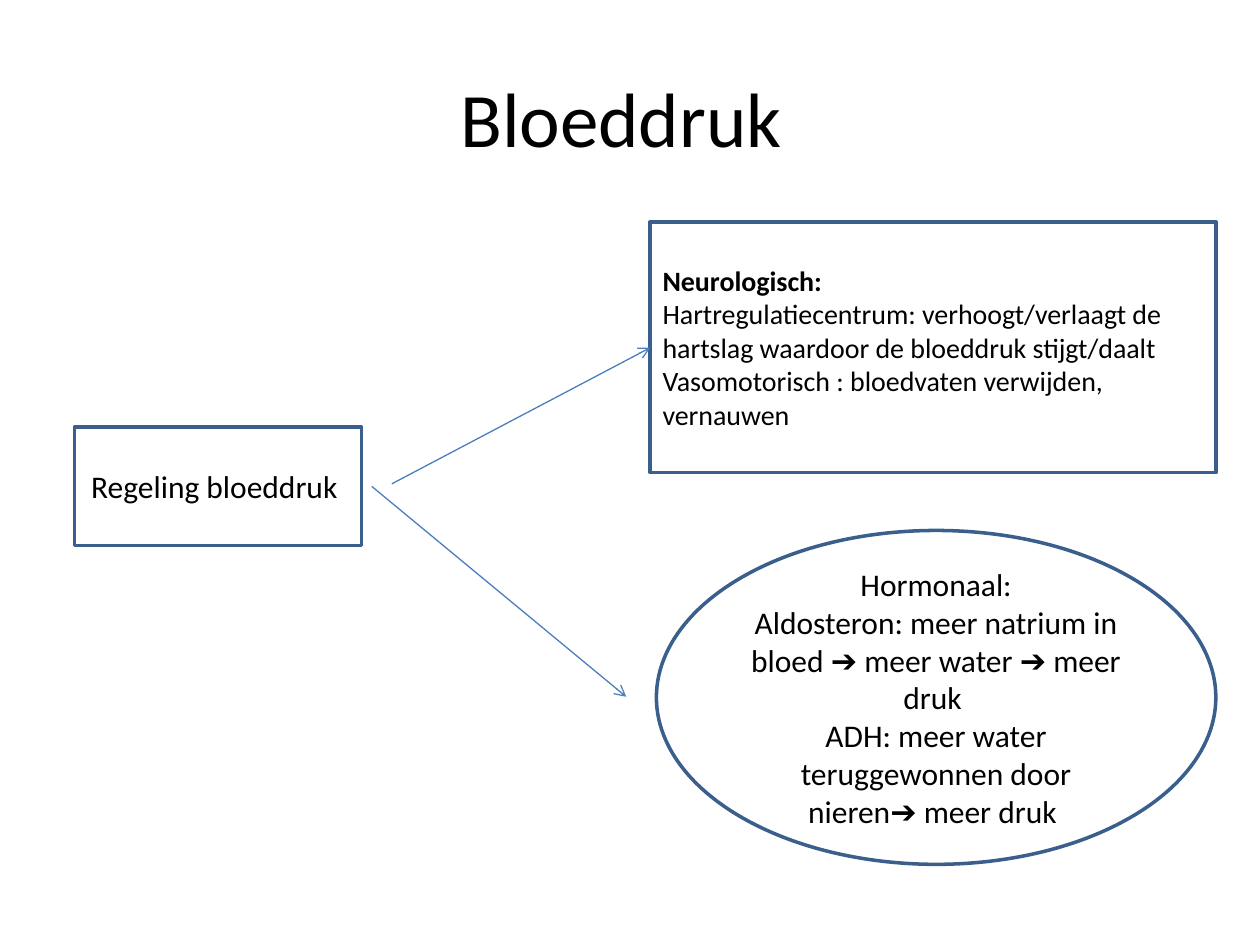
from lxml import etree
from pptx import Presentation
from pptx.dml.color import RGBColor
from pptx.enum.shapes import MSO_CONNECTOR, MSO_SHAPE
from pptx.enum.text import MSO_ANCHOR, PP_ALIGN
from pptx.oxml.ns import qn
from pptx.util import Inches, Pt

RECTANGLE, OVAL = MSO_SHAPE.RECTANGLE, MSO_SHAPE.OVAL
STRAIGHT = MSO_CONNECTOR.STRAIGHT
MIDDLE = MSO_ANCHOR.MIDDLE
LEFT, CENTER = PP_ALIGN.LEFT, PP_ALIGN.CENTER
TITLE_ONLY = 5


def color(value):
    return RGBColor.from_string(value)


def set_text(shape, lines, size, alignment):
    text_frame = shape.text_frame
    text_frame.word_wrap = True
    text_frame.vertical_anchor = MIDDLE
    text_frame.text = "\n".join(lines)
    for paragraph in text_frame.paragraphs:
        paragraph.alignment = alignment
        for run in paragraph.runs:
            run.font.name = "Calibri"
            run.font.size = Pt(size)
            run.font.color.rgb = color("000000")


presentation = Presentation()
presentation.slide_width = Inches(10)
presentation.slide_height = Inches(7.5)
slide = presentation.slides.add_slide(presentation.slide_layouts[TITLE_ONLY])

# Title
title = slide.shapes.title
title.left, title.top = Inches(0.5), Inches(0.3)
title.width, title.height = Inches(9), Inches(1.25)
set_text(title, ["Bloeddruk "], 44, CENTER)

# Topic and its two kinds of regulation
boxes = [
    (RECTANGLE, (0.59, 3.39, 2.28, 0.94), 18, CENTER, ["Regeling bloeddruk "]),
    (RECTANGLE, (5.16, 1.76, 4.49, 1.99), 16, LEFT, [
        "Neurologisch:",
        "Hartregulatiecentrum: verhoogt/verlaagt de hartslag waardoor de bloeddruk stijgt/daalt",
        "Vasomotorisch : bloedvaten verwijden, vernauwen",
    ]),
    (OVAL, (5.21, 4.21, 4.44, 2.65), 18, CENTER, [
        "Hormonaal:",
        "Aldosteron: meer natrium in bloed ➔ meer water ➔ meer druk ",
        "ADH: meer water teruggewonnen door nieren➔ meer druk ",
    ]),
]
for kind, position, size, alignment, lines in boxes:
    shape = slide.shapes.add_shape(kind, *map(Inches, position))
    shape.shadow.inherit = False
    shape.fill.solid()
    shape.fill.fore_color.rgb = color("FFFFFF")
    shape.line.color.rgb = color("3A5F8C")
    shape.line.width = Pt(2)
    set_text(shape, lines, size, alignment)
    if lines[0] == "Neurologisch:":
        shape.text_frame.paragraphs[0].runs[0].font.bold = True

# Arrows from the topic
for ends in [(3.11, 3.84, 5.16, 2.76), (2.95, 3.86, 4.97, 5.53)]:
    arrow = slide.shapes.add_connector(STRAIGHT, *map(Inches, ends))
    arrow.line.color.rgb = color("4B7EBC")
    arrow.line.width = Pt(0.75)
    etree.SubElement(arrow.line._get_or_add_ln(), qn("a:tailEnd"), type="arrow")
    etree.SubElement(arrow._element.spPr, qn("a:effectLst"))

presentation.save("out.pptx")
